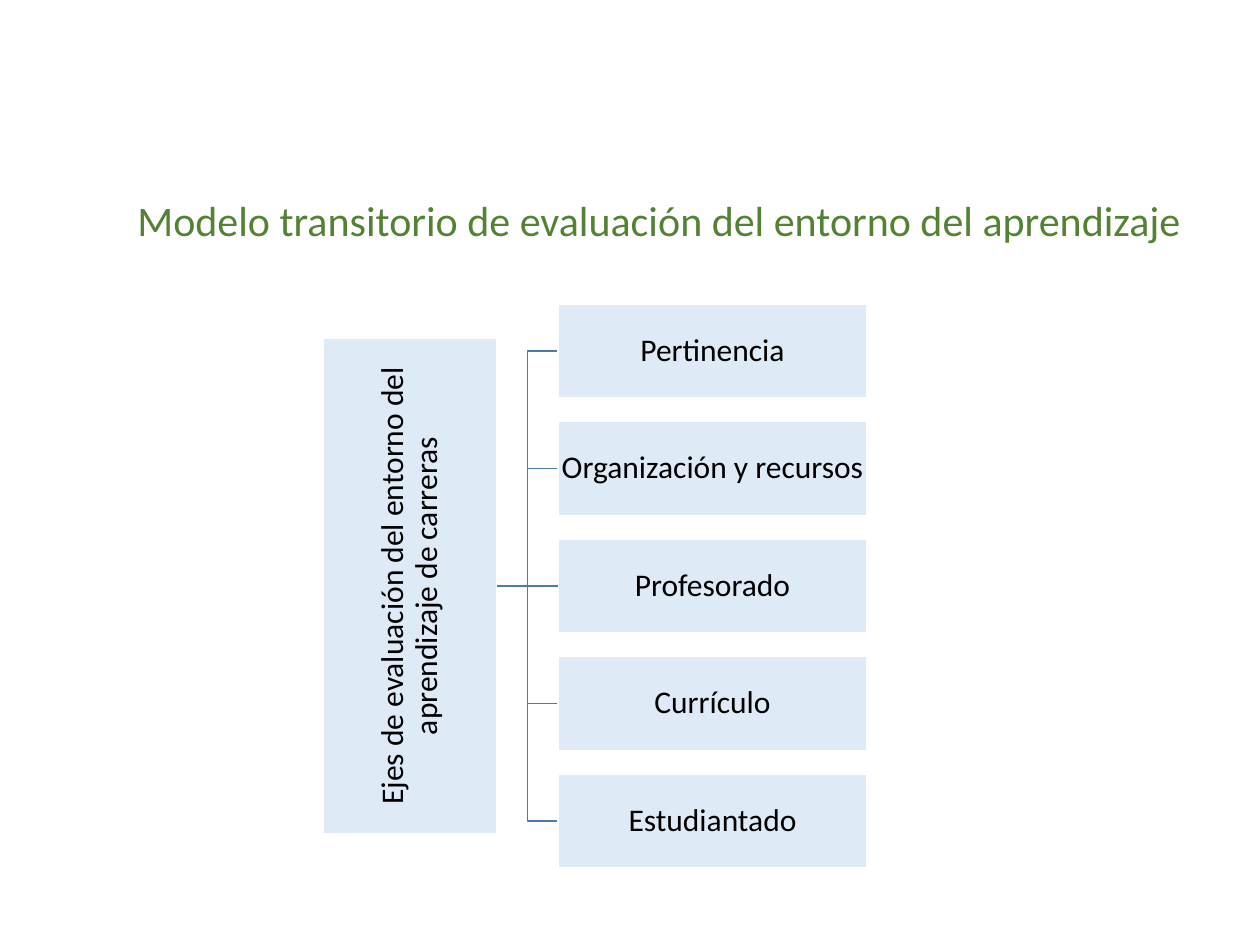
from pptx import Presentation
from pptx import util as u
from pptx.dml import color
from pptx.enum import shapes, text
from pptx.oxml import ns
from lxml import etree

SCALE = 914400 / 126
AXES = ["Pertinencia", "Organización y recursos", "Profesorado",
        "Currículo", "Estudiantado"]


def px(n):
    return u.Emu(round(n * SCALE))


def rgb(code):
    return color.RGBColor.from_string(code)


def style(para, size, code):
    para.font.name = "Calibri"
    para.font.size = u.Pt(size)
    para.font.color.rgb = rgb(code)


def stroke(line, code):
    line.color.rgb = rgb(code)
    line.width = u.Pt(1)


def title(slide, x, y, w, h):
    frame = slide.shapes.add_textbox(px(x), px(y), px(w), px(h)).text_frame
    frame.word_wrap = False
    frame.auto_size = text.MSO_AUTO_SIZE.SHAPE_TO_FIT_TEXT
    para = frame.paragraphs[0]
    para.text = "Modelo transitorio de evaluación del entorno del aprendizaje"
    style(para, 24, "548235")


def box(slide, label, x, y, w, h, turn=0):
    rect = slide.shapes.add_shape(shapes.MSO_SHAPE.RECTANGLE,
                                  px(x), px(y), px(w), px(h))
    rect.rotation = turn
    rect.shadow.inherit = False
    rect.fill.solid()
    rect.fill.fore_color.rgb = rgb("DEEBF7")
    stroke(rect.line, "FFFFFF")
    frame = rect.text_frame
    frame.word_wrap = True
    frame.vertical_anchor = text.MSO_ANCHOR.MIDDLE
    frame.margin_left = frame.margin_right = u.Inches(0.01)
    frame.margin_top = frame.margin_bottom = u.Inches(0.01)
    para = frame.paragraphs[0]
    para.text = label
    para.alignment = text.PP_ALIGN.CENTER
    para.line_spacing = 0.9
    style(para, 18, "000000")
    return rect


def elbow(slide, x, y, end_x, end_y):
    mid = (x + end_x) / 2
    path = slide.shapes.build_freeform(px(x), px(y), scale=1.0)
    path.add_line_segments([(px(mid), px(y)), (px(mid), px(end_y)),
                            (px(end_x), px(end_y))], close=False)
    bend = path.convert_to_shape()
    bend.shadow.inherit = False
    bend.fill.background()
    stroke(bend.line, "497CAB")


def link(slide, root, leaf, x, y, end_x):
    line = slide.shapes.add_connector(shapes.MSO_CONNECTOR.STRAIGHT,
                                      px(x), px(y), px(end_x), px(y))
    line.begin_connect(root, 2)
    line.end_connect(leaf, 1)
    line.begin_x, line.begin_y = px(x), px(y)
    line.end_x, line.end_y = px(end_x), px(y)
    stroke(line.line, "497CAB")
    etree.SubElement(line._element.spPr, ns.qn("a:effectLst"))


def tree(slide, x, y, w, h):
    root_w, root_h = 174, 495
    leaf_w, leaf_h = 309, 94
    leaf_x = x + w - leaf_w
    root_end = x + root_w
    mid_y = y + h / 2
    step = (h - leaf_h) / (len(AXES) - 1)
    tops = [y + i * step for i in range(len(AXES))]
    half = len(AXES) // 2
    for i, top in enumerate(tops):
        if i != half:
            elbow(slide, root_end, mid_y, leaf_x, top + leaf_h / 2)
    root = box(slide,
               "Ejes de evaluación del entorno del aprendizaje de carreras",
               x + (root_w - root_h) / 2, mid_y - root_w / 2,
               root_h, root_w, 270)
    leaves = [box(slide, label, leaf_x, top, leaf_w, leaf_h)
              for label, top in zip(AXES, tops)]
    link(slide, root, leaves[half], root_end, mid_y, leaf_x)


def main():
    deck = Presentation()
    deck.slide_width, deck.slide_height = u.Inches(10), u.Inches(7.5)
    slide = deck.slides.add_slide(deck.slide_layouts[6])
    title(slide, 125, 188, 1079, 63)
    tree(slide, 323, 304, 544, 564)
    deck.save("out.pptx")


if __name__ == "__main__":
    main()
